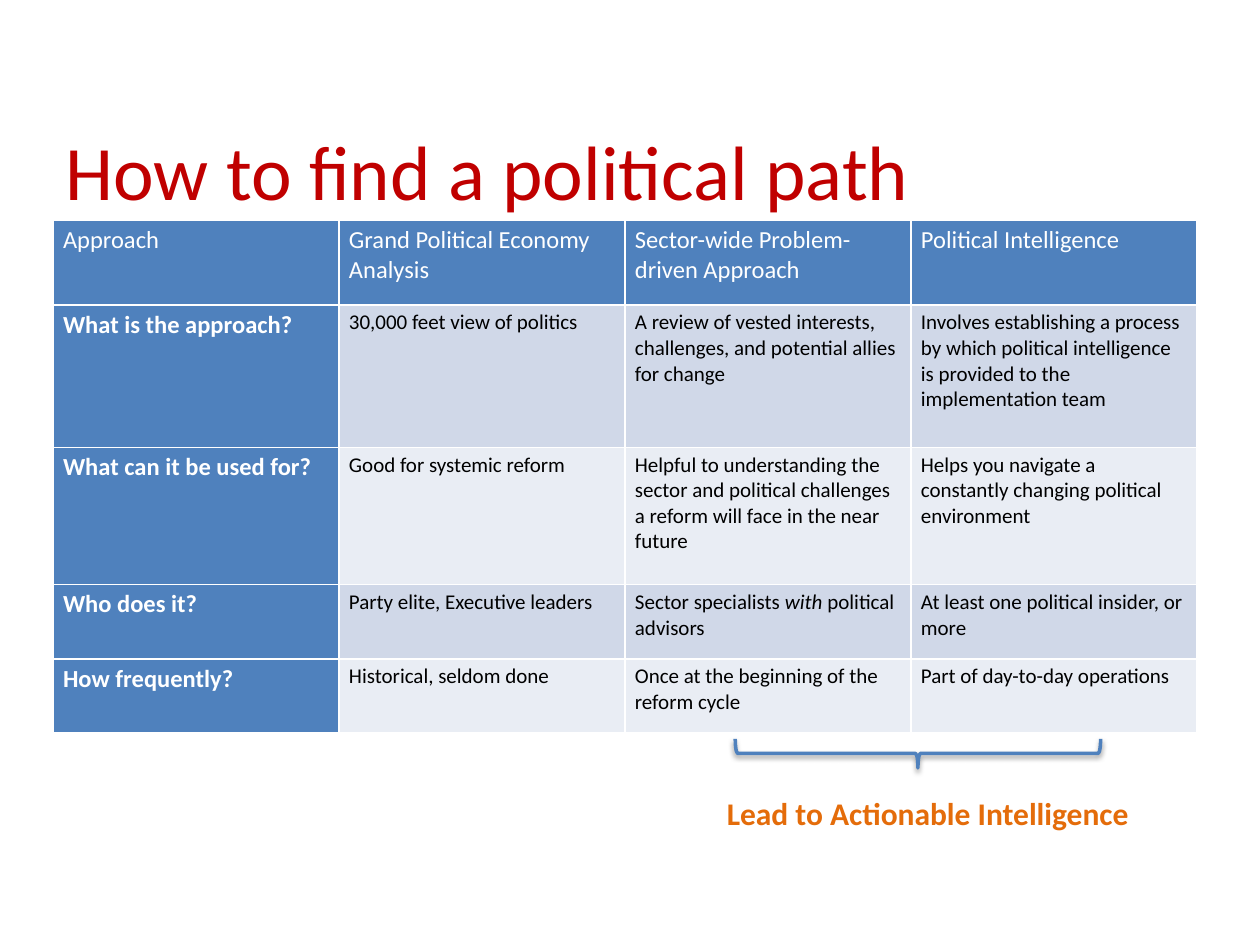
from lxml import etree
from pptx import Presentation
from pptx.dml.color import RGBColor
from pptx.enum.shapes import MSO_SHAPE
from pptx.enum.text import MSO_ANCHOR, PP_ALIGN
from pptx.oxml import parse_xml
from pptx.util import Inches, Pt

RIGHT_BRACE = MSO_SHAPE.RIGHT_BRACE
TOP = MSO_ANCHOR.TOP
LEFT = PP_ALIGN.LEFT

# Content: each cell is a list of (text, italic) spans or a plain string
TITLE = "How to find a political path"
CONCLUSION = "Lead to Actionable Intelligence"
ROWS = [
    ["Approach", "Grand Political Economy Analysis",
     "Sector-wide Problem-driven Approach", "Political Intelligence"],
    ["What is the approach?", "30,000 feet view of politics",
     "A review of vested interests, challenges, and potential allies for change",
     "Involves establishing a process by which political intelligence "
     "is provided to the implementation team"],
    ["What can it be used for?", "Good for systemic reform",
     "Helpful to understanding the sector and political challenges "
     "a reform will face in the near future",
     "Helps you navigate a constantly changing political environment"],
    ["Who does it?", "Party elite, Executive leaders",
     [("Sector specialists ", False), ("with", True), (" political advisors", False)],
     "At least one political insider, or more"],
    ["How frequently?", "Historical, seldom done",
     "Once at the beginning of the reform cycle", "Part of day-to-day operations"],
]
ROW_HEIGHTS = [0.67, 1.13, 1.09, 0.59, 0.59]
TABLE_LEFT, TABLE_TOP, TABLE_WIDTH = 0.42, 1.75, 9.08
BLUE, WHITE, BLACK = "4F81BD", "FFFFFF", "000000"
BANDS = ["E9EDF4", "D0D8E8"]

SHADOW = """<a:outerShdw
 xmlns:a="http://schemas.openxmlformats.org/drawingml/2006/main"
 blurRad="40000" dist="20000" dir="5400000" rotWithShape="0">
 <a:srgbClr val="000000"><a:alpha val="38000"/></a:srgbClr></a:outerShdw>"""


def color(value):
    return RGBColor.from_string(value)


def write(frame, content, size, text_color, bold=False):
    para = frame.paragraphs[0]
    para.alignment = LEFT
    font = para.font
    font.name, font.size, font.bold = "Calibri", Pt(size), bold
    font.color.rgb = color(text_color)
    spans = [(content, False)] if isinstance(content, str) else content
    for text, italic in spans:
        span = para.add_run()
        span.text = text
        if italic:
            span.font.italic = True


deck = Presentation()
deck.slide_width, deck.slide_height = Inches(10), Inches(7.5)
page = deck.slides.add_slide(deck.slide_layouts[5])

# Title
title = page.shapes.title
title.left, title.top = Inches(TABLE_LEFT), Inches(0.93)
title.width, title.height = Inches(TABLE_WIDTH), Inches(1.25)
title.text_frame.vertical_anchor = TOP
write(title.text_frame, TITLE, 44, "C00000")

# Comparison table
table = page.shapes.add_table(
    len(ROWS), len(ROWS[0]), Inches(TABLE_LEFT), Inches(TABLE_TOP),
    Inches(TABLE_WIDTH), Inches(sum(ROW_HEIGHTS))).table
table.first_col = True
for column in table.columns:
    column.width = Inches(TABLE_WIDTH / len(ROWS[0]))
for r, (row, height) in enumerate(zip(ROWS, ROW_HEIGHTS)):
    table.rows[r].height = Inches(height)
    for c, content in enumerate(row):
        cell = table.cell(r, c)
        heading = r == 0 or c == 0
        cell.margin_left = cell.margin_right = Inches(0.08)
        cell.margin_top = cell.margin_bottom = Inches(0.04)
        cell.fill.solid()
        cell.fill.fore_color.rgb = color(BLUE if heading else BANDS[r % 2])
        write(cell.text_frame, content, 14 if heading else 12,
              WHITE if heading else BLACK, bold=c == 0 and r > 0)

# Conclusion under the last two columns
box = page.shapes.add_textbox(Inches(5.67), Inches(6.25), Inches(3.42), Inches(0.4))
box.text_frame.word_wrap = True
write(box.text_frame, CONCLUSION, 18, "E46C0A", bold=True)

# Brace, turned to open upwards, with a soft shadow
brace = page.shapes.add_shape(
    RIGHT_BRACE, Inches(7.17), Inches(4.53), Inches(0.23), Inches(2.9))
brace.rotation = 90
brace.fill.background()
brace.line.color.rgb = color(BLUE)
brace.line.width = Pt(2)
brace.shadow.inherit = False
effects = brace.element.spPr.find("{*}effectLst")
effects.append(parse_xml(etree.tostring(etree.fromstring(SHADOW))))

deck.save("out.pptx")
